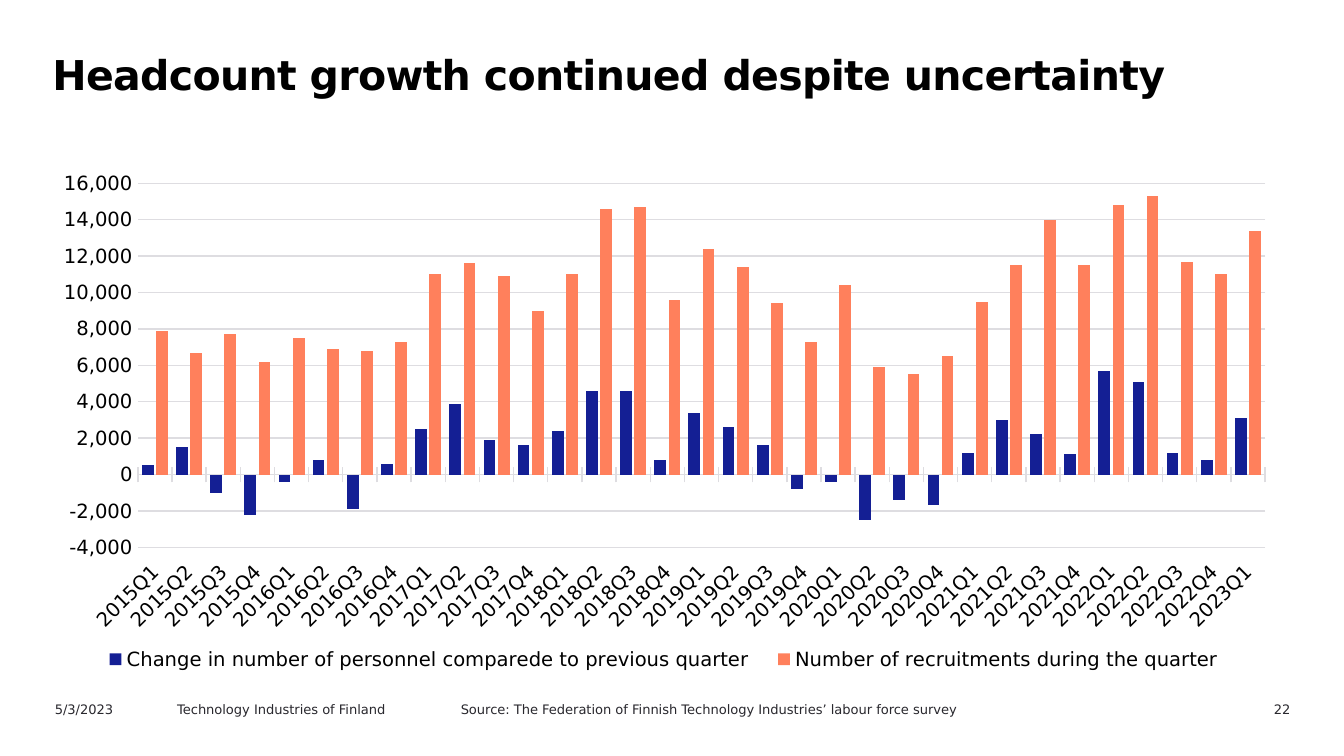
from dataclasses import dataclass

from lxml import etree
from pptx import Presentation
from pptx import util as u
from pptx.chart import data as chart_data
from pptx.dml import color
from pptx.enum import chart as ch, text
from pptx.oxml import ns


@dataclass(frozen=True)
class Theme:
    font: str = "DejaVu Sans"
    ink: str = "000000"
    muted: str = "29282E"
    grid: str = "DEDDE1"
    change: str = "141F94"
    recruits: str = "FF805C"
    title_size: float = 22
    chart_size: float = 10.5
    footer_size: float = 7


THEME = Theme()
QUARTERS = [f"{2015 + n // 4}Q{n % 4 + 1}" for n in range(33)]
PERSONNEL_CHANGE = [
    500, 1500, -1000, -2200, -400, 800, -1900, 600, 2500, 3900, 1900,
    1600, 2400, 4600, 4600, 800, 3400, 2600, 1600, -800, -400, -2500,
    -1400, -1700, 1200, 3000, 2200, 1100, 5700, 5100, 1200, 800, 3100]
RECRUITMENTS = [
    7900, 6700, 7700, 6200, 7500, 6900, 6800, 7300, 11000, 11600, 10900,
    9000, 11000, 14600, 14700, 9600, 12400, 11400, 9400, 7300, 10400, 5900,
    5500, 6500, 9500, 11500, 14000, 11500, 14800, 15300, 11700, 11000, 13400]
SERIES = [
    ("Change in number of personnel comparede to previous quarter",
     PERSONNEL_CHANGE, THEME.change),
    ("Number of recruitments during the quarter", RECRUITMENTS, THEME.recruits),
]
# Offset from the footer's left edge, width, wording, alignment
FOOTER = [
    (0, 1, "5/3/2023", text.PP_ALIGN.LEFT),
    (0.91, 1.94, "Technology Industries of Finland", text.PP_ALIGN.LEFT),
    (3.02, 4.11, "Source: The Federation of Finnish Technology Industries’ "
                 "labour force survey", text.PP_ALIGN.LEFT),
    (8.45, 0.94, "22", text.PP_ALIGN.RIGHT),
]


def apply(target, **values):
    for name, value in values.items():
        setattr(target, name, value)


def style_font(font, size, ink, bold=False):
    apply(font, name=THEME.font, size=u.Pt(size), bold=bold)
    font.color.rgb = color.RGBColor.from_string(ink)


def style_line(line, ink):
    line.color.rgb = color.RGBColor.from_string(ink)
    line.width = u.Pt(0.75)


def set_layout(parent, before, inner=False, **fractions):
    """Fix a chart part's place, as fractions of the chart."""
    for old in parent.findall(ns.qn("c:layout")):
        parent.remove(old)
    layout = etree.Element(ns.qn("c:layout"))
    manual = etree.SubElement(layout, ns.qn("c:manualLayout"))
    settings = {"layoutTarget": "inner"} if inner else {}
    settings.update(xMode="edge", yMode="edge", **fractions)
    for name, value in settings.items():
        etree.SubElement(manual, ns.qn(f"c:{name}")).set("val", str(value))
    parent.find(ns.qn(before)).addprevious(layout)


def place_title(slide, left, top, width, height):
    title = slide.shapes.title
    apply(title, left=u.Inches(left), top=u.Inches(top),
          width=u.Inches(width), height=u.Inches(height))
    frame = title.text_frame
    apply(frame, word_wrap=True, auto_size=text.MSO_AUTO_SIZE.NONE,
          vertical_anchor=text.MSO_ANCHOR.TOP, margin_left=u.Inches(0.11))
    headline = frame.paragraphs[0]
    apply(headline, alignment=text.PP_ALIGN.LEFT, line_spacing=u.Pt(27))
    run = headline.add_run()
    run.text = "Headcount growth continued despite uncertainty"
    style_font(run.font, THEME.title_size, THEME.ink, bold=True)
    run._r.get_or_add_rPr().set("spc", "-33")  # slightly tightened letters


def place_chart(slide, left, top, width, height):
    figures = chart_data.CategoryChartData(number_format="#,##0")
    figures.categories = QUARTERS
    for name, values, _ in SERIES:
        figures.add_series(name, values)
    chart = slide.shapes.add_chart(
        ch.XL_CHART_TYPE.COLUMN_CLUSTERED, u.Inches(left), u.Inches(top),
        u.Inches(width), u.Inches(height), figures).chart
    style_font(chart.font, THEME.chart_size, THEME.ink)
    apply(chart, has_title=False, has_legend=True)

    # Columns
    plot = chart.plots[0]
    apply(plot, gap_width=70, overlap=-21, vary_by_categories=False)
    for series, (_, _, fill) in zip(plot.series, SERIES):
        series.invert_if_negative = False
        series.format.fill.solid()
        series.format.fill.fore_color.rgb = color.RGBColor.from_string(fill)
    set_layout(plot._element.getparent(), "c:barChart", inner=True,
               x=0.08, y=0.04, w=0.9, h=0.7)

    # Quarters, slanted below the plot
    quarters = chart.category_axis
    apply(quarters, major_tick_mark=ch.XL_TICK_MARK.CROSS,
          minor_tick_mark=ch.XL_TICK_MARK.NONE,
          tick_label_position=ch.XL_TICK_LABEL_POSITION.LOW)
    style_font(quarters.tick_labels.font, THEME.chart_size, THEME.ink)
    quarters._element.txPr.bodyPr.set("rot", "-2700000")
    style_line(quarters.format.line, THEME.grid)

    # Headcount scale
    headcount = chart.value_axis
    apply(headcount, minimum_scale=-4000, maximum_scale=16000, major_unit=2000,
          major_tick_mark=ch.XL_TICK_MARK.NONE,
          minor_tick_mark=ch.XL_TICK_MARK.NONE, has_major_gridlines=True)
    apply(headcount.tick_labels, number_format="#,##0",
          number_format_is_linked=False)
    style_font(headcount.tick_labels.font, THEME.chart_size, THEME.ink)
    headcount.format.line.fill.background()
    style_line(headcount.major_gridlines.format.line, THEME.grid)

    # Legend on one row
    legend = chart.legend
    apply(legend, position=ch.XL_LEGEND_POSITION.BOTTOM,
          include_in_layout=False)
    style_font(legend.font, THEME.chart_size, THEME.ink)
    set_layout(legend._element, "c:overlay", x=0.04, y=0.92, w=0.92, h=0.07)


def place_footer(slide, left, top, height):
    for offset, width, wording, alignment in FOOTER:
        note = slide.shapes.add_textbox(
            u.Inches(left + offset), u.Inches(top),
            u.Inches(width), u.Inches(height))
        apply(note.text_frame, word_wrap=True, margin_bottom=0,
              auto_size=text.MSO_AUTO_SIZE.NONE,
              vertical_anchor=text.MSO_ANCHOR.TOP)
        paragraph = note.text_frame.paragraphs[0]
        paragraph.alignment = alignment
        run = paragraph.add_run()
        run.text = wording
        style_font(run.font, THEME.footer_size, THEME.muted)


def main():
    deck = Presentation()
    apply(deck, slide_width=u.Inches(10), slide_height=u.Inches(10 * 9 / 16))
    slide = deck.slides.add_slide(deck.slide_layouts.get_by_name("Title Only"))
    place_title(slide, 0.28, 0.31, 8.74, 0.71)
    place_chart(slide, 0.28, 1.21, 9.32, 3.87)
    place_footer(slide, 0.31, 5.17, 0.18)
    deck.save("out.pptx")


if __name__ == "__main__":
    main()
